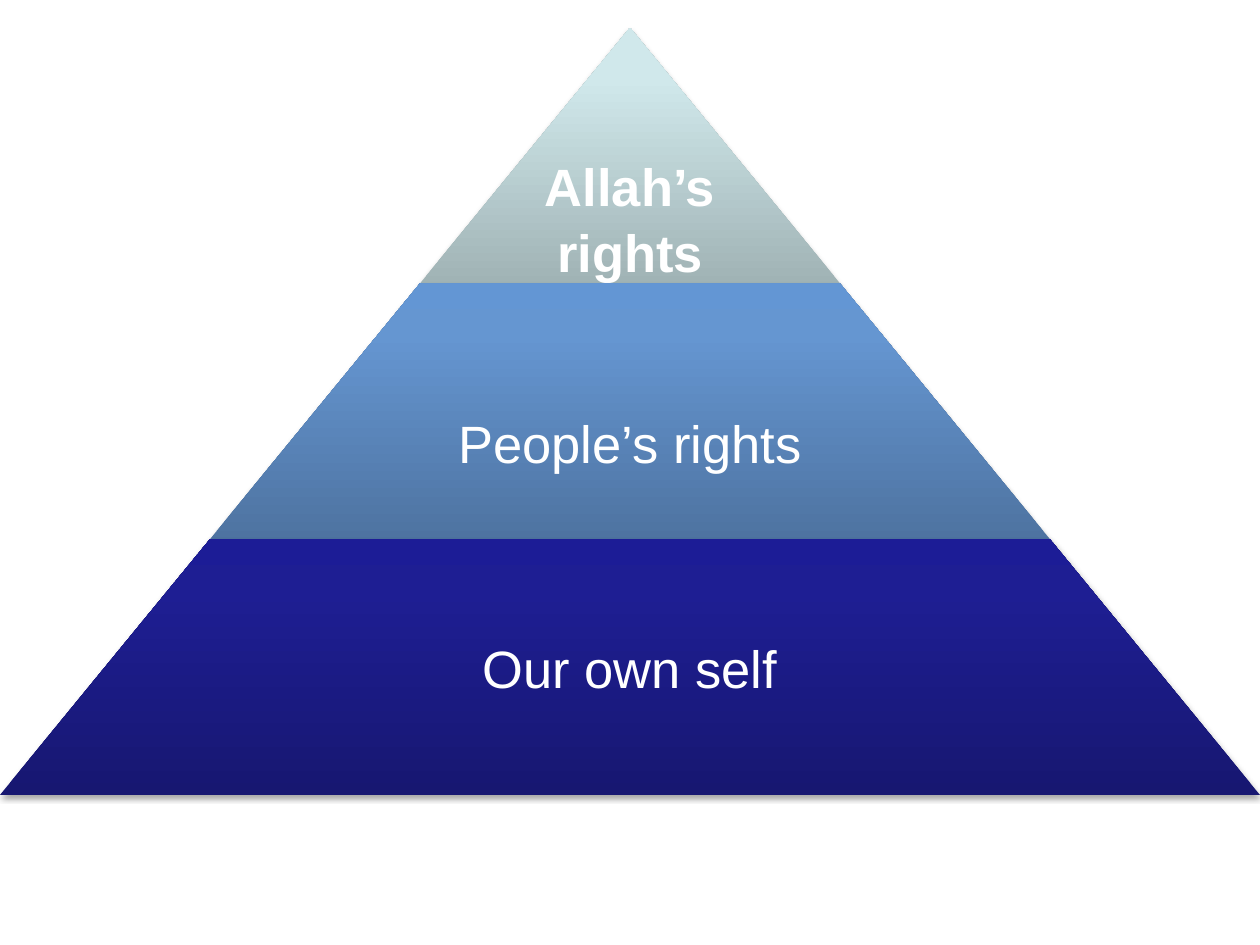
from copy import deepcopy

from lxml import etree
from pptx import Presentation, util as u
from pptx.dml.color import RGBColor
from pptx.enum import shapes, text
from pptx.oxml.ns import qn

W, H = 10, 7.5
TOP, ROW = 0.22, 2.03
PAD = 0.04
TIERS = [
    (["Allah’s", "rights"], True, ("A0B3B5", "D0E8EB", "D1EAEC"), 1, (1, 0)),
    (["People’s rights"], False, ("4E73A1", "6596D1", "6396D4"), 0.65, (0.54, PAD)),
    (["Our own self"], False, ("171771", "1E1E93", "1C1C96"), 0.65, (PAD, PAD)),
]
STOPS = (0, 0.8, 1)


def rgb(code):
    return RGBColor.from_string(code)


def place(width, row):
    return [u.Inches(n) for n in ((W - width) / 2, TOP + row * ROW, width, ROW)]


def shade(shape, hues):
    fill = shape.fill
    fill.gradient()
    fill.gradient_angle = 90
    last = shape._element.spPr.findall(".//" + qn("a:gs"))[-1]
    last.addnext(deepcopy(last))
    for stop, spot, hue in zip(fill.gradient_stops, STOPS, hues):
        stop.position = spot
        stop.color.rgb = rgb(hue)


def shadow(shape):
    shape.shadow.inherit = False
    fx = shape._element.spPr.find(qn("a:effectLst"))
    cast = etree.SubElement(fx, qn("a:outerShdw"), blurRad=str(u.Pt(3.1)),
                            dist=str(u.Pt(1.8)), dir="5400000", rotWithShape="0")
    tone = etree.SubElement(cast, qn("a:srgbClr"), val="000000")
    etree.SubElement(tone, qn("a:alpha"), val="35000")


def label(box, lines, bold, pads):
    frame = box.text_frame
    frame.word_wrap = True
    frame.vertical_anchor = text.MSO_ANCHOR.MIDDLE
    frame.margin_left = frame.margin_right = u.Inches(PAD)
    frame.margin_top, frame.margin_bottom = map(u.Inches, pads)
    for i, line in enumerate(lines):
        para = frame.add_paragraph() if i else frame.paragraphs[0]
        para.alignment = text.PP_ALIGN.CENTER
        if i:
            para.space_before = u.Pt(1.5)
        run = para.add_run()
        run.text = line
        font = run.font
        font.name, font.size, font.bold = "Arial", u.Pt(30), bold
        font.color.rgb = rgb("FFFFFF")


deck = Presentation()
deck.slide_width, deck.slide_height = u.Inches(W), u.Inches(H)
slide = deck.slides.add_slide(deck.slide_layouts[6])
group = slide.shapes.add_group_shape()
for row, (lines, bold, hues, share, pads) in enumerate(TIERS):
    width = W * (row + 1) / len(TIERS)
    tier = group.shapes.add_shape(shapes.MSO_SHAPE.TRAPEZOID, *place(width, row))
    tier.adjustments[0] = W / len(TIERS) / 2 / ROW
    shade(tier, hues)
    tier.line.fill.background()
    shadow(tier)
    label(group.shapes.add_textbox(*place(width * share, row)), lines, bold, pads)
deck.save("out.pptx")
